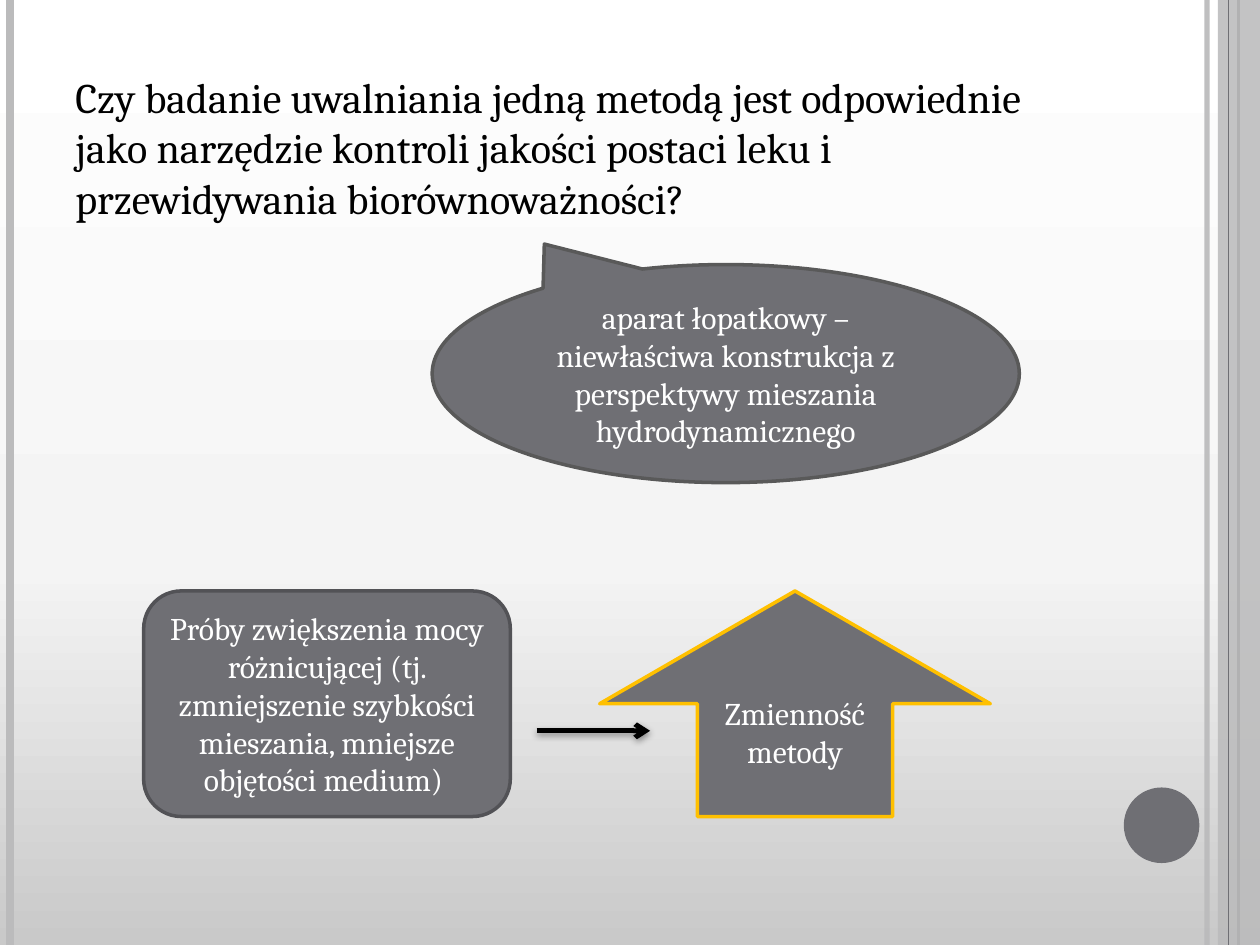
from lxml import etree
from pptx import Presentation
from pptx import util as u
from pptx.dml.color import RGBColor
from pptx.enum import shapes, text
from pptx.oxml import ns

GRAY, PALE, WHITE, BLACK = "6F6F74", "BBBBBC", "FFFFFF", "000000"
WIDTH, HEIGHT = 720, 540

# Content: lengths in points
BACKGROUND = [(0, "C9C9C9"), (40, "F4F4F4"), (100, WHITE)]
QUESTION = ("Czy badanie uwalniania jedną metodą jest odpowiednie jako narzędzie "
            "kontroli jakości postaci leku i przewidywania biorównoważności?")
# x, colour, width, opacity in percent
SIDE_LINES = [(689.8, PALE, 3, 93), (5.8, PALE, 4.5, 100), (707.8, GRAY, 1.5, 100)]
INNER_LINE = (702, GRAY, 0.75, 100)
# shape, (left, top, width, height), line colour, adjustments, wording
BUBBLES = [
    (shapes.MSO_SHAPE.OVAL_CALLOUT, (247, 151.2, 335.5, 124.6), "595959", (-0.309, -0.594),
     "aparat łopatkowy – niewłaściwa konstrukcja z perspektywy mieszania hydrodynamicznego"),
    (shapes.MSO_SHAPE.ROUNDED_RECTANGLE, (82.1, 337.7, 209.5, 128.9), "525256", (),
     "Próby zwiększenia mocy różnicującej (tj. zmniejszenie szybkości mieszania, "
     "mniejsze objętości medium) "),
    (shapes.MSO_SHAPE.UP_ARROW, (342.7, 337.7, 223.2, 128.9), "FFC000", (), "Zmienność metody"),
]


def color(value):
    return RGBColor.from_string(value)


def add_child(parent, tag, **attributes):
    child = etree.SubElement(parent, ns.qn(tag))
    for name, value in attributes.items():
        child.set(name, str(value))
    return child


def set_opacity(fill_format_element, percent):
    for color_element in fill_format_element.iter(ns.qn("a:srgbClr")):
        add_child(color_element, "a:alpha", val=percent * 1000)


def write(shape, wording, size=18, ink=WHITE, align=text.PP_ALIGN.CENTER,
          anchor=text.MSO_ANCHOR.MIDDLE, before=0):
    frame = shape.text_frame
    frame.word_wrap = True
    frame.vertical_anchor = anchor
    paragraph = frame.paragraphs[0]
    paragraph.alignment = align
    paragraph.space_before = u.Pt(before)
    run = paragraph.add_run()
    run.text = wording
    run.font.name, run.font.size = "Cambria", u.Pt(size)
    run.font.color.rgb = color(ink)


def add_shape(slide, kind, box, fill=GRAY, line=None, line_width=2):
    shape = slide.shapes.add_shape(kind, *map(u.Pt, box))
    shape.shadow.inherit = False
    shape.fill.solid()
    shape.fill.fore_color.rgb = color(fill)
    if line:
        shape.line.color.rgb = color(line)
        shape.line.width = u.Pt(line_width)
    else:
        shape.line.fill.background()
    return shape


def add_line(slide, start, end, ink, width, opacity=100):
    line = slide.shapes.add_connector(shapes.MSO_CONNECTOR.STRAIGHT, *map(u.Pt, start + end))
    line.line.color.rgb = color(ink)
    line.line.width = u.Pt(width)
    if opacity < 100:
        set_opacity(line.line._get_or_add_ln(), opacity)
    effects = add_child(line._element.spPr, "a:effectLst")
    return line, effects


def add_side_line(slide, x, ink, width, opacity):
    add_line(slide, (x, 0), (x, HEIGHT), ink, width, opacity)


def paint_background(slide):
    fill = slide.background.fill
    fill.gradient()
    fill.gradient_angle = 90
    stops = slide._element.find(".//" + ns.qn("a:gsLst"))
    for stop in list(stops):
        stops.remove(stop)
    for position, value in BACKGROUND:
        stop = add_child(stops, "a:gs", pos=position * 1000)
        add_child(stop, "a:srgbClr", val=value)


def main():
    presentation = Presentation()
    presentation.slide_width, presentation.slide_height = u.Pt(WIDTH), u.Pt(HEIGHT)
    slide = presentation.slides.add_slide(presentation.slide_layouts[6])
    paint_background(slide)

    # Side decoration
    for side_line in SIDE_LINES:
        add_side_line(slide, *side_line)
    band = add_shape(slide, shapes.MSO_SHAPE.RECTANGLE, (696, 0, 24, HEIGHT), PALE)
    set_opacity(band._element.spPr, 87)
    add_side_line(slide, *INNER_LINE)
    add_shape(slide, shapes.MSO_SHAPE.OVAL, (642.2, 450, 43.2, 43.2))

    # Question
    question = slide.shapes.add_textbox(*map(u.Pt, (36, 37.4, 588.2, 472.3)))
    write(question, QUESTION, size=24, ink=BLACK, align=text.PP_ALIGN.LEFT,
          anchor=text.MSO_ANCHOR.TOP, before=6)

    # Callout, box and block arrow
    for kind, box, line, adjustments, wording in BUBBLES:
        bubble = add_shape(slide, kind, box, line=line)
        for index, value in enumerate(adjustments):
            bubble.adjustments[index] = value
        write(bubble, wording)

    # Arrow with a soft shadow
    arrow, effects = add_line(slide, (306.7, 417.6), (371.5, 417.6), BLACK, 2.75)
    add_child(arrow.line._get_or_add_ln(), "a:tailEnd", type="arrow")
    shadow = add_child(effects, "a:outerShdw", blurRad=u.Pt(4), dist=u.Pt(1.6),
                       dir=90 * 60000, rotWithShape=0)
    add_child(shadow, "a:srgbClr", val=BLACK)
    set_opacity(shadow, 42)

    presentation.save("out.pptx")


if __name__ == "__main__":
    main()
